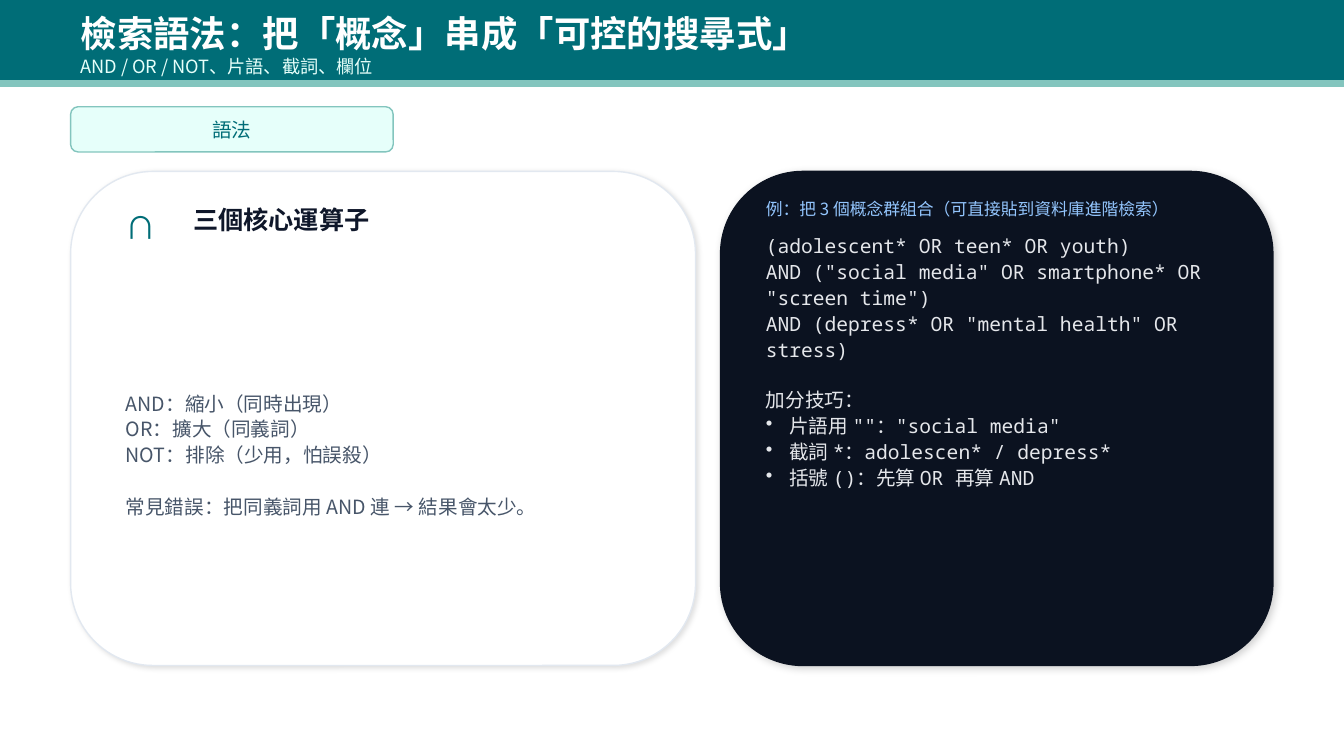
import dataclasses

import lxml.etree
import pptx
import pptx.dml.color
import pptx.enum.shapes
import pptx.enum.text
import pptx.oxml.ns
import pptx.util

Cm = pptx.util.Cm
Pt = pptx.util.Pt
qn = pptx.oxml.ns.qn
Shape = pptx.enum.shapes.MSO_SHAPE
Align = pptx.enum.text.PP_ALIGN
Anchor = pptx.enum.text.MSO_ANCHOR


@dataclasses.dataclass(frozen=True)
class Theme:
    sans: str = "Noto Sans CJK TC"
    mono: str = "Noto Sans Mono"
    teal: str = "006D77"
    mint: str = "83C5BE"
    pale: str = "E6FFFA"
    white: str = "FFFFFF"
    border: str = "E2E8F0"
    ink: str = "0F172A"
    slate: str = "475569"
    night: str = "0B1220"
    sky: str = "93C5FD"
    code: str = "E5E7EB"
    shadow: str = "000000"
    title_size: int = 26
    icon_size: int = 22
    heading_size: int = 18
    body_size: int = 14
    subtitle_size: int = 13
    caption_size: int = 12
    line_spacing: float = 1.1


def color(value):
    return pptx.dml.color.RGBColor.from_string(value)


def write_text(paragraph, text, *, font, size, fill, bold=False, align=Align.LEFT,
               spacing=None, before=0, bullet=False):
    paragraph.alignment = align
    paragraph.space_before = Pt(before)
    if spacing:
        paragraph.line_spacing = spacing
    if bullet:
        properties = paragraph._p.get_or_add_pPr()
        properties.set("marL", str(Cm(0.59)))
        properties.set("indent", str(-Cm(0.59)))
        lxml.etree.SubElement(properties, qn("a:buChar"), char="•")
    run = paragraph.add_run()
    run.text = text
    run.font.name = font
    run.font.size = Pt(size)
    run.font.bold = bold
    run.font.color.rgb = color(fill)


class SlideBuilder:
    def __init__(self, presentation, theme):
        self.theme = theme
        self.slide = presentation.slides.add_slide(presentation.slide_layouts[5])

    def box(self, kind, place, fill, line):
        shape = self.slide.shapes.add_shape(kind, *map(Cm, place))
        shape.shadow.inherit = False
        shape.fill.solid()
        shape.fill.fore_color.rgb = color(fill)
        shape.line.color.rgb = color(line)
        shape.line.width = Pt(1)
        return shape

    def card(self, place, fill, line, opacity, blur, distance):
        shape = self.box(Shape.ROUNDED_RECTANGLE, place, fill, line)
        effects = shape.element.spPr.find(qn("a:effectLst"))
        shadow = lxml.etree.SubElement(
            effects, qn("a:outerShdw"), blurRad=str(Pt(blur)), dist=str(Pt(distance)),
            dir=str(45 * 60000), algn="ctr", rotWithShape="0")
        tint = lxml.etree.SubElement(shadow, qn("a:srgbClr"), val=self.theme.shadow)
        lxml.etree.SubElement(tint, qn("a:alpha"), val=str(opacity * 1000))

    def fill_frame(self, shape, lines, anchor=Anchor.MIDDLE, **style):
        frame = shape.text_frame
        frame.word_wrap = True
        frame.auto_size = pptx.enum.text.MSO_AUTO_SIZE.NONE
        frame.vertical_anchor = anchor
        style = {"font": self.theme.sans, **style}
        for index, (text, extra) in enumerate(lines):
            paragraph = frame.add_paragraph() if index else frame.paragraphs[0]
            write_text(paragraph, text, **{**style, **extra})

    def title(self, text, place, band):
        shape = self.slide.shapes.title
        shape.left, shape.top, shape.width, shape.height = map(Cm, place)
        band.element.addnext(shape.element)
        self.fill_frame(shape, [(text, {})], size=self.theme.title_size,
                        fill=self.theme.white, bold=True)

    def text(self, place, lines, **style):
        shape = self.slide.shapes.add_textbox(*map(Cm, place))
        self.fill_frame(shape, lines, **style)

    def chip(self, place, text):
        theme = self.theme
        shape = self.box(Shape.ROUNDED_RECTANGLE, place, theme.pale, theme.mint)
        self.fill_frame(shape, [(text, {})], size=theme.body_size, fill=theme.teal,
                        align=Align.CENTER)


def build_header(builder, theme):
    band = builder.box(Shape.RECTANGLE, (0, 0, 33.87, 2.03), theme.teal, theme.teal)
    builder.title("檢索語法：把「概念」串成「可控的搜尋式」", (1.78, 0.3, 29.21, 1.07), band)
    builder.text((1.78, 1.4, 29.21, 0.56), [("AND / OR / NOT、片語、截詞、欄位", {})],
                 size=theme.subtitle_size, fill=theme.pale)
    builder.box(Shape.RECTANGLE, (0, 2.03, 33.87, 0.15), theme.mint, theme.mint)
    builder.chip((1.78, 2.69, 8.13, 1.14), "語法")


def build_operators(builder, theme):
    builder.card((1.78, 4.32, 15.75, 12.45), theme.white, theme.border,
                 opacity=12, blur=4, distance=1.8)
    builder.text((2.67, 5.03, 1.78, 1.4), [("∩", {})], size=theme.icon_size,
                 fill=theme.teal, align=Align.CENTER)
    builder.text((4.62, 5.08, 12.19, 0.89), [("三個核心運算子", {})],
                 size=theme.heading_size, fill=theme.ink, bold=True)
    builder.text((2.92, 6.48, 13.72, 9.91), [
        ("AND：縮小（同時出現）", {}),
        ("OR：擴大（同義詞）", {}),
        ("NOT：排除（少用，怕誤殺）", {}),
        ("常見錯誤：把同義詞用 AND 連 → 結果會太少。", {"before": 18.5}),
    ], size=theme.body_size, fill=theme.slate, spacing=theme.line_spacing)


def build_example(builder, theme):
    builder.card((18.16, 4.32, 13.92, 12.45), theme.night, theme.night,
                 opacity=18, blur=6, distance=2.2)
    builder.text((19.05, 4.95, 12.14, 0.64),
                 [("例：把 3 個概念群組合（可直接貼到資料庫進階檢索）", {})],
                 size=theme.caption_size, fill=theme.sky)
    builder.text((19.05, 5.72, 12.14, 10.41), [
        ("(adolescent* OR teen* OR youth)", {}),
        ('AND ("social media" OR smartphone* OR "screen time")', {}),
        ('AND (depress* OR "mental health" OR stress)', {}),
        ("加分技巧：", {"before": 17.5}),
        ('片語用 ""："social media"', {"bullet": True}),
        ("截詞 *：adolescen* / depress*", {"bullet": True}),
        ("括號 ()：先算 OR 再算 AND", {"bullet": True}),
    ], anchor=Anchor.TOP, font=theme.mono, size=theme.body_size, fill=theme.code,
        spacing=theme.line_spacing)


def main():
    theme = Theme()
    presentation = pptx.Presentation()
    presentation.slide_width = Cm(33.87)
    presentation.slide_height = Cm(19.05)
    builder = SlideBuilder(presentation, theme)
    build_header(builder, theme)
    build_operators(builder, theme)
    build_example(builder, theme)
    presentation.save("out.pptx")


if __name__ == "__main__":
    main()
